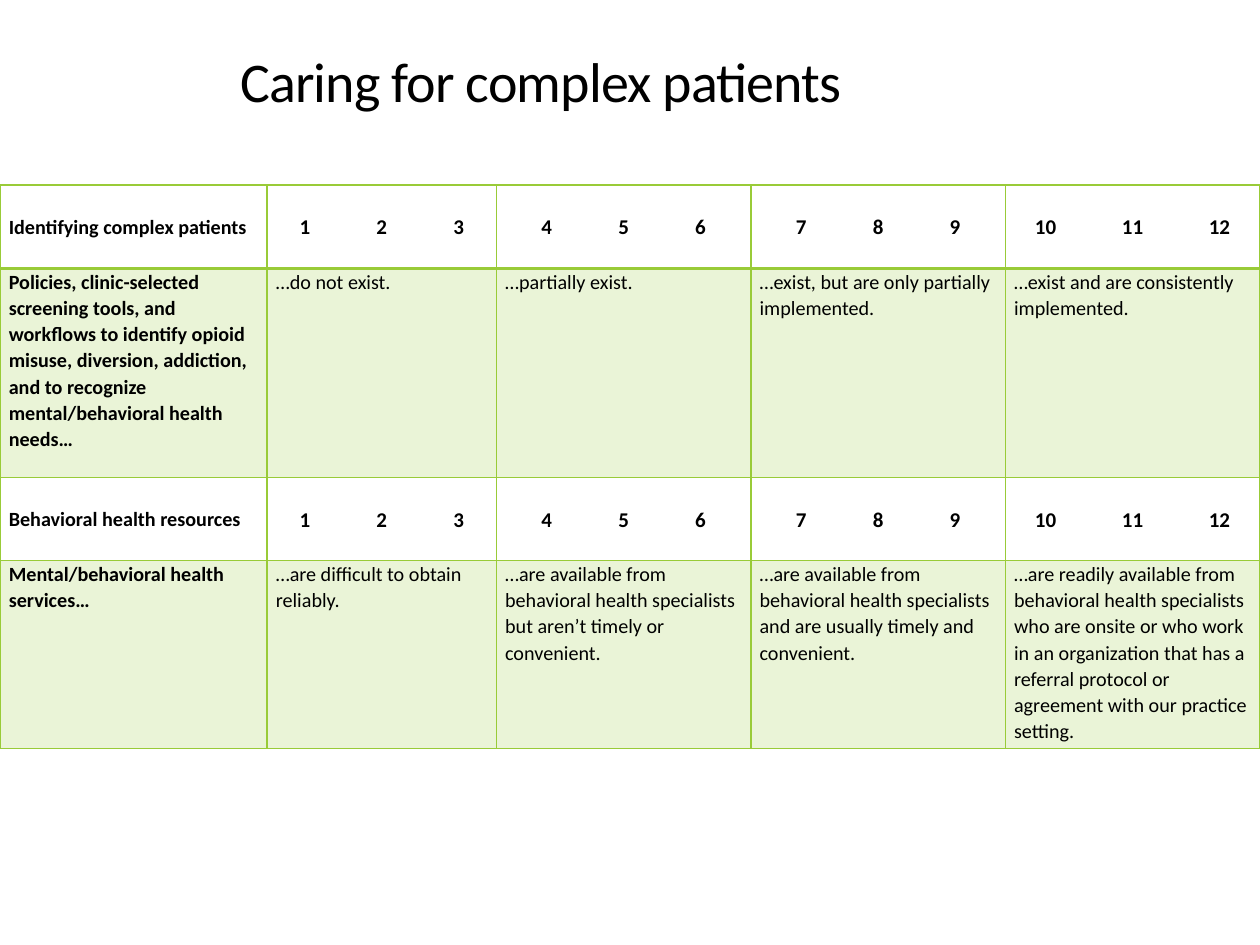
from dataclasses import dataclass

from lxml import etree
from pptx import Presentation
from pptx import util as u
from pptx.dml.color import RGBColor
from pptx.enum import text
from pptx.oxml.ns import qn


@dataclass(frozen=True)
class Theme:
    font: str = "Calibri"
    ink: RGBColor = RGBColor(0, 0, 0)
    green: RGBColor = RGBColor(0x99, 0xCB, 0x38)
    tint_percent: int = 20
    title_size: float = 32
    body_size: float = 11.5
    score_size: float = 12
    line_spacing: float = 1.07
    rule: float = 1
    heavy_rule: float = 2


@dataclass(frozen=True)
class Topic:
    """One assessed topic: a row of scores above a row of level descriptions."""
    name: str
    subject: str
    levels: tuple[str, ...]


THEME = Theme()
COLUMN_WIDTHS = (2.12, 1.82, 2.02, 2.02, 2.02)
ROW_HEIGHTS = (0.66, 1.66, 0.66, 1.49)
CELL_MARGIN = 0.07
SCORES = ((1, 2, 3), (4, 5, 6), (7, 8, 9), (10, 11, 12))

TOPICS = (
    Topic(
        "Identifying complex patients",
        "Policies, clinic-selected screening tools, and workflows to identify opioid misuse, "
        "diversion, addiction, and to recognize mental/behavioral health needs…",
        (
            "…do not exist.",
            "…partially exist.",
            "…exist, but are only partially implemented.",
            "…exist and are consistently implemented.",
        ),
    ),
    Topic(
        "Behavioral health resources",
        "Mental/behavioral health services…",
        (
            "…are difficult to obtain reliably.",
            "…are available from behavioral health specialists but aren’t timely or convenient.",
            "…are available from behavioral health specialists and are usually timely and "
            "convenient.",
            "…are readily available from behavioral health specialists who are onsite or who "
            "work in an organization that has a referral protocol or agreement with our "
            "practice setting.",
        ),
    ),
)


def set_font(paragraph, size: float, bold: bool = False) -> None:
    font = paragraph.font
    font.name = THEME.font
    font.size = u.Pt(size)
    font.bold = bold
    font.color.rgb = THEME.ink


def add_title(slide, words: str) -> None:
    box = slide.shapes.add_textbox(
        u.Inches(1.81), u.Inches(0.46), u.Inches(7.93), u.Inches(0.49))
    frame = box.text_frame
    frame.word_wrap = True
    frame.vertical_anchor = text.MSO_ANCHOR.BOTTOM
    heading = frame.paragraphs[0]
    heading.text = words
    heading.line_spacing = 0.85
    set_font(heading, THEME.title_size)
    heading.runs[0]._r.get_or_add_rPr().set("spc", "-50")


def set_borders(cell, top: float) -> None:
    """Draw all four cell edges; only the top weight varies."""
    properties = cell._tc.get_or_add_tcPr()
    weights = {"lnL": THEME.rule, "lnR": THEME.rule, "lnT": top, "lnB": THEME.rule}
    for edge, weight in weights.items():
        line = etree.SubElement(properties, qn(f"a:{edge}"), w=str(u.Pt(weight)))
        fill = etree.SubElement(line, qn("a:solidFill"))
        etree.SubElement(fill, qn("a:srgbClr"), val=str(THEME.green))


def set_tint(cell) -> None:
    cell.fill.solid()
    cell.fill.fore_color.rgb = THEME.green
    color = cell._tc.tcPr.find(f"{qn('a:solidFill')}/{qn('a:srgbClr')}")
    etree.SubElement(color, qn("a:alpha"), val=str(THEME.tint_percent * 1000))


def add_centred_tabs(paragraph, scores: tuple[int, ...], width: float) -> None:
    """Spread the scores evenly about the middle of the column."""
    gap = 0.69 if max(scores) >= 10 else 0.61
    middle = width / 2 - CELL_MARGIN
    tabs = etree.SubElement(paragraph._p.get_or_add_pPr(), qn("a:tabLst"))
    for offset in (-gap, 0, gap):
        etree.SubElement(tabs, qn("a:tab"), pos=str(u.Inches(middle + offset)), algn="ctr")


def write_cell(cell, words: str, size: float, bold: bool, scores=(), width: float = 0) -> None:
    cell.margin_left = cell.margin_right = u.Inches(CELL_MARGIN)
    cell.margin_top = cell.margin_bottom = 0
    paragraph = cell.text_frame.paragraphs[0]
    paragraph.text = words
    if scores:
        add_centred_tabs(paragraph, scores, width)
    paragraph.line_spacing = THEME.line_spacing
    set_font(paragraph, size, bold)


def fill_topic(table, first_row: int, topic: Topic) -> None:
    write_cell(table.cell(first_row, 0), topic.name, THEME.body_size, True)
    write_cell(table.cell(first_row + 1, 0), topic.subject, THEME.body_size, True)
    for column, (scores, level) in enumerate(zip(SCORES, topic.levels), start=1):
        score_line = "".join(f"\t{score}" for score in scores)
        write_cell(table.cell(first_row, column), score_line, THEME.score_size, True,
                   scores, COLUMN_WIDTHS[column])
        write_cell(table.cell(first_row + 1, column), level, THEME.body_size, False)

    for column in range(len(COLUMN_WIDTHS)):
        score_cell = table.cell(first_row, column)
        score_cell.vertical_anchor = text.MSO_ANCHOR.MIDDLE
        set_borders(score_cell, THEME.rule)
        score_cell.fill.background()
        level_cell = table.cell(first_row + 1, column)
        set_borders(level_cell, THEME.heavy_rule if first_row == 0 else THEME.rule)
        set_tint(level_cell)


def add_assessment(slide) -> None:
    table = slide.shapes.add_table(
        len(ROW_HEIGHTS), len(COLUMN_WIDTHS), 0, u.Inches(1.47),
        u.Inches(sum(COLUMN_WIDTHS)), u.Inches(sum(ROW_HEIGHTS))).table
    table.first_row = table.horz_banding = False
    for column, width in zip(table.columns, COLUMN_WIDTHS):
        column.width = u.Inches(width)
    for row, height in zip(table.rows, ROW_HEIGHTS):
        row.height = u.Inches(height)
    for index, topic in enumerate(TOPICS):
        fill_topic(table, 2 * index, topic)


def main() -> None:
    deck = Presentation()
    deck.slide_width, deck.slide_height = u.Inches(10), u.Inches(7.5)
    slide = deck.slides.add_slide(deck.slide_layouts[6])
    add_title(slide, "Caring for complex patients")
    add_assessment(slide)
    deck.save("out.pptx")


if __name__ == "__main__":
    main()
